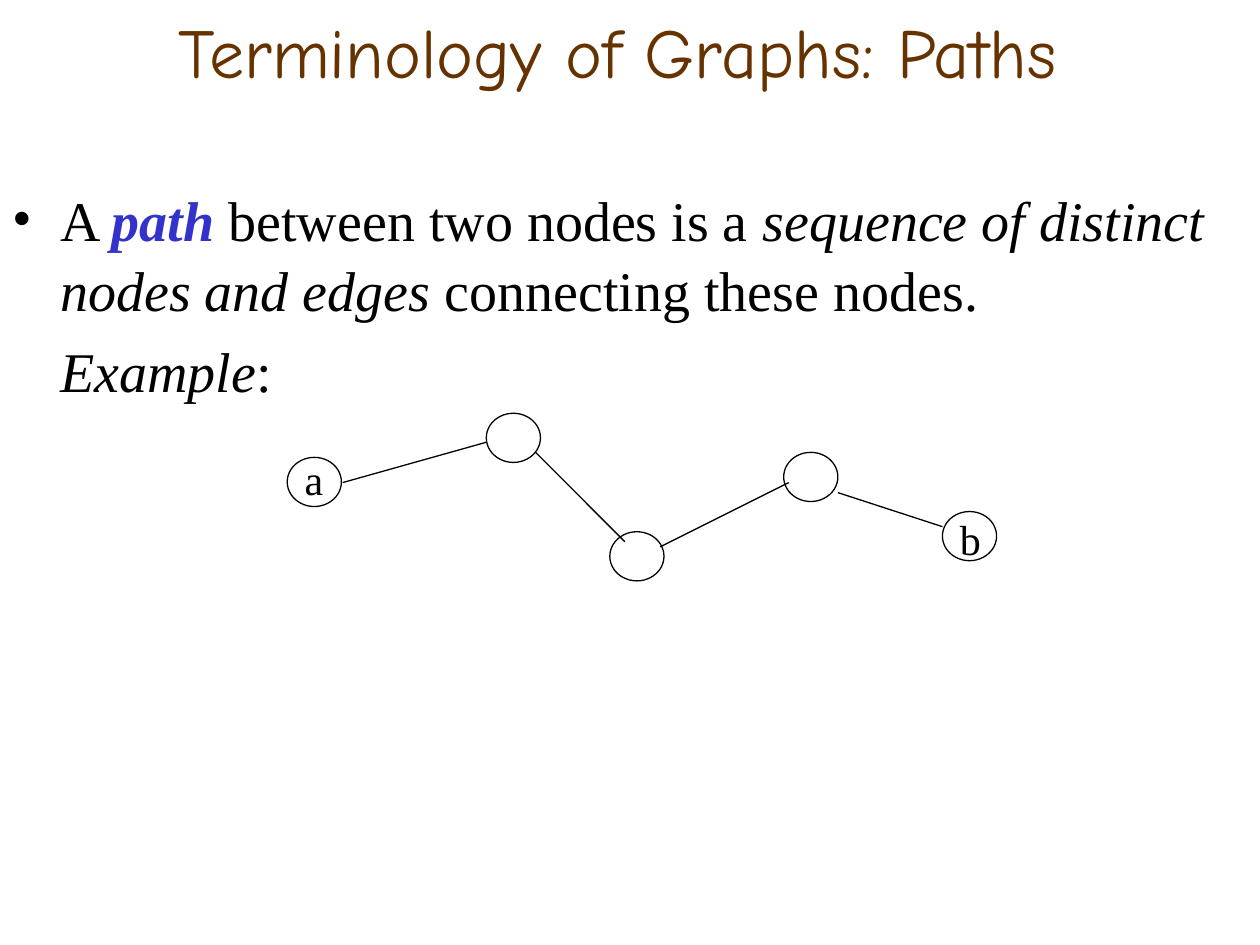
from dataclasses import dataclass

from lxml.etree import SubElement
from pptx import Presentation
from pptx.dml.color import RGBColor
from pptx.enum.shapes import MSO_CONNECTOR as Connector, MSO_SHAPE as Shape
from pptx.enum.text import MSO_ANCHOR as Anchor, PP_ALIGN as Align
from pptx.oxml.ns import qn
from pptx.util import Inches, Pt

COLUMNS, ROWS = 100, 75
CELL = Inches(10) // COLUMNS
NODE_WIDTH, NODE_HEIGHT = 4.3, 3.9
LABEL_WIDTH, LABEL_HEIGHT = 3.9, 5
BLACK, WHITE, BROWN, BLUE = "000000", "FFFFFF", "663300", "3333CC"
SERIF, COMIC = "Times New Roman", "Comic Neue"


@dataclass(frozen=True)
class Span:
    text: str
    size: int = 32
    color: str = BLACK
    font: str = SERIF
    bold: bool = False
    italic: bool = False


@dataclass(frozen=True)
class Node:
    column: float
    row: float


@dataclass(frozen=True)
class Edge:
    start: tuple[float, float]
    end: tuple[float, float]


@dataclass(frozen=True)
class Label:
    text: str
    column: float
    row: float


NODES = [Node(22.8, 36.3), Node(38.6, 32.8), Node(48.4, 42.2),
         Node(62.2, 35.9), Node(74.8, 40.6)]
EDGES = [Edge((27.2, 38.3), (38.6, 35.1)), Edge((42.5, 35.9), (49.6, 43)),
         Edge((52.4, 43.4), (62.6, 38.3)), Edge((66.5, 39.1), (74.8, 41.8))]
LABELS = [Label("a", 23.2, 35.5), Label("b", 75.2, 40.3)]
DEFINITION = [
    Span("A "),
    Span("path", color=BLUE, bold=True, italic=True),
    Span(" between two nodes is a "),
    Span("sequence of distinct nodes and edges", italic=True),
    Span(" connecting these nodes."),
]
EXAMPLE = [Span("Example", italic=True), Span(":")]


def rgb(color: str) -> RGBColor:
    return RGBColor.from_string(color)


def grid(*cells: float) -> list[int]:
    return [round(cell * CELL) for cell in cells]


def set_all(target, values: dict) -> None:
    for name, value in values.items():
        setattr(target, name, value)


def draw_outline(line) -> None:
    line.color.rgb = rgb(BLACK)
    line.width = Pt(0.75)


def add_text(page, area: tuple, anchor=Anchor.TOP):
    frame = page.shapes.add_textbox(*grid(*area)).text_frame
    set_all(frame, {"word_wrap": True, "vertical_anchor": anchor})
    return frame


def write(para, spans: list[Span], **layout) -> None:
    set_all(para, layout)
    for span in spans:
        run = para.add_run()
        run.text = span.text
        set_all(run.font, {"name": span.font, "size": Pt(span.size),
                           "bold": span.bold, "italic": span.italic})
        run.font.color.rgb = rgb(span.color)


def indent(para, hanging: float, bullet: str = "") -> None:
    properties = para._p.get_or_add_pPr()
    properties.set("marL", str(Inches(0.38)))
    properties.set("indent", str(-Inches(hanging)))
    if bullet:
        SubElement(properties, qn("a:buFont"), typeface=SERIF)
        SubElement(properties, qn("a:buChar"), char=bullet)


def draw_node(page, node: Node) -> None:
    circle = page.shapes.add_shape(
        Shape.OVAL, *grid(node.column, node.row, NODE_WIDTH, NODE_HEIGHT))
    circle.shadow.inherit = False
    circle.fill.solid()
    circle.fill.fore_color.rgb = rgb(WHITE)
    draw_outline(circle.line)


def draw_edge(page, edge: Edge) -> None:
    line = page.shapes.add_connector(
        Connector.STRAIGHT, *grid(*edge.start, *edge.end))
    draw_outline(line.line)
    SubElement(line._element.spPr, qn("a:effectLst"))


def draw_label(page, label: Label) -> None:
    frame = add_text(page, (label.column, label.row, LABEL_WIDTH, LABEL_HEIGHT))
    write(frame.paragraphs[0], [Span(label.text, 24)])


def main() -> None:
    deck = Presentation()
    set_all(deck, {"slide_width": COLUMNS * CELL, "slide_height": ROWS * CELL})
    page = deck.slides.add_slide(deck.slide_layouts[6])

    title = add_text(page, (4.3, 0, 89.4, 8), Anchor.MIDDLE)
    write(title.paragraphs[0],
          [Span("Terminology of Graphs: Paths", 40, BROWN, COMIC)],
          alignment=Align.CENTER)

    body = add_text(page, (0, 14, COLUMNS, ROWS - 14))
    definition, example = body.paragraphs[0], body.add_paragraph()
    write(definition, DEFINITION, line_spacing=1.04)
    write(example, EXAMPLE, line_spacing=1.04, space_before=Pt(6.4))
    indent(definition, 0.38, "•")
    indent(example, 0)

    for draw, items in ((draw_node, NODES), (draw_edge, EDGES),
                        (draw_label, LABELS)):
        for item in items:
            draw(page, item)
    deck.save("out.pptx")


if __name__ == "__main__":
    main()
